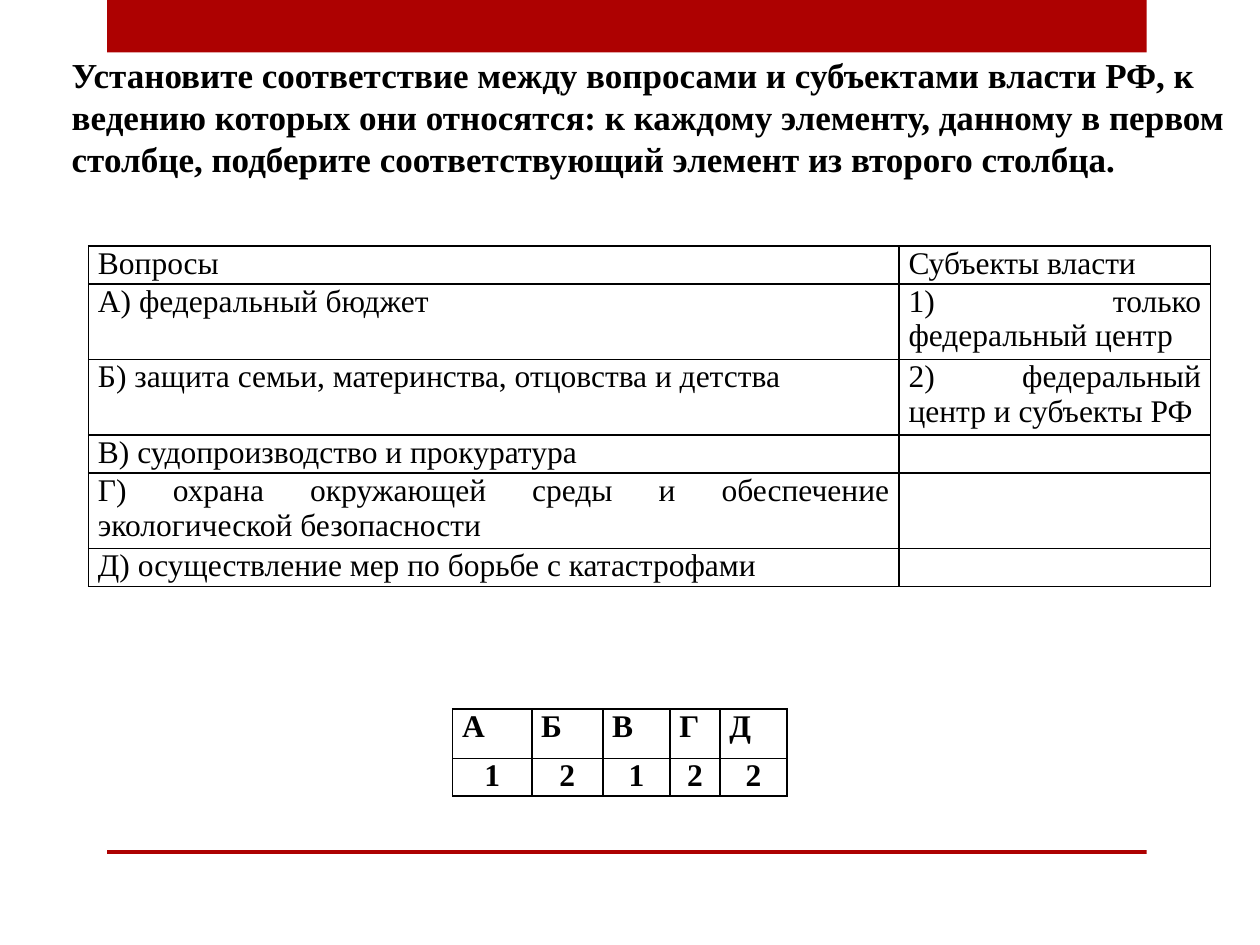
from lxml.etree import SubElement
from pptx import Presentation
from pptx.dml.color import RGBColor
from pptx.enum.shapes import MSO_SHAPE
from pptx.enum.text import MSO_ANCHOR, MSO_AUTO_SIZE, PP_ALIGN
from pptx.oxml.ns import qn
from pptx.util import Pt

RED = RGBColor(0xAD, 0x01, 0x01)
BLACK = RGBColor(0, 0, 0)
FONT = "Times New Roman"
TEXT_SIZE = 18
ROW_HEIGHT = 21.6

TITLE = (
    "Установите соответствие между вопросами и субъектами власти РФ, "
    "к ведению которых они относятся: к каждому элементу, данному в первом "
    "столбце, подберите соответствующий элемент из второго столбца."
)
QUESTIONS = [
    ("Вопросы", "Субъекты власти"),
    ("А) федеральный бюджет", "1) только федеральный центр"),
    ("Б) защита семьи, материнства, отцовства и детства",
     "2) федеральный центр и субъекты РФ"),
    ("В) судопроизводство и прокуратура", ""),
    ("Г) охрана окружающей среды и обеспечение экологической безопасности", ""),
    ("Д) осуществление мер по борьбе с катастрофами", ""),
]
QUESTION_LINES = [1, 2, 2, 1, 2, 1]
ANSWERS = ["АБВГД", "12122"]


class SlideBuilder:
    def __init__(self, page):
        self.page = page

    def add_text(self, para, text, size, bold, align):
        para.alignment = align
        span = para.add_run()
        span.text = text
        span.font.name = FONT
        span.font.size = Pt(size)
        span.font.bold = bold
        span.font.color.rgb = BLACK

    def title(self, text, left, top, width, height):
        box = self.page.shapes.title
        box.left, box.top, box.width, box.height = map(Pt, (left, top, width, height))
        frame = box.text_frame
        frame.word_wrap = True
        frame.auto_size = MSO_AUTO_SIZE.SHAPE_TO_FIT_TEXT
        frame.vertical_anchor = MSO_ANCHOR.MIDDLE
        para = frame.paragraphs[0]
        para.line_spacing = Pt(24)
        self.add_text(para, text, 20, True, PP_ALIGN.LEFT)

    def bar(self, left, top, width, height):
        bar = self.page.shapes.add_shape(
            MSO_SHAPE.RECTANGLE, *map(Pt, (left, top, width, height)))
        bar.shadow.inherit = False
        bar.fill.solid()
        bar.fill.fore_color.rgb = RED
        bar.line.fill.background()

    def border(self, cell):
        """Draw a thin black line on all four sides of the cell."""
        properties = cell._tc.get_or_add_tcPr()
        for position, side in enumerate(("a:lnL", "a:lnR", "a:lnT", "a:lnB")):
            line = properties.makeelement(qn(side), {"w": str(Pt(1))})
            fill = SubElement(line, qn("a:solidFill"))
            SubElement(fill, qn("a:srgbClr"), val=str(BLACK))
            properties.insert(position, line)

    def table(self, rows, left, top, widths, heights, aligns, bold=False):
        """Add a plain ruled table; aligns holds one alignment per row."""
        table = self.page.shapes.add_table(
            len(rows), len(widths), Pt(left), Pt(top),
            Pt(sum(widths)), Pt(sum(heights))).table
        table.first_row = table.horz_banding = False
        for column, width in zip(table.columns, widths):
            column.width = Pt(width)
        for r, (texts, height, align) in enumerate(zip(rows, heights, aligns)):
            table.rows[r].height = Pt(height)
            for c, text in enumerate(texts):
                cell = table.cell(r, c)
                cell.margin_left = cell.margin_right = Pt(5.4)
                cell.margin_top = cell.margin_bottom = 0
                cell.fill.background()
                self.border(cell)
                self.add_text(cell.text_frame.paragraphs[0], text,
                              TEXT_SIZE, bold, align)


def main():
    deck = Presentation()
    deck.slide_width, deck.slide_height = Pt(720), Pt(540)
    slide = SlideBuilder(deck.slides.add_slide(deck.slide_layouts[5]))

    slide.bar(61.2, 0, 594, 30)
    slide.bar(61.2, 485.8, 594, 2.2)
    slide.title(TITLE, 33.8, 26.8, 686.2, 79.9)
    slide.table(QUESTIONS, 50.6, 140.6, [463.2, 178],
                [lines * ROW_HEIGHT for lines in QUESTION_LINES],
                [PP_ALIGN.JUSTIFY] * len(QUESTIONS))
    slide.table(ANSWERS, 258.7, 405.2, [45.2, 40.6, 38.4, 28.6, 38.4],
                [28.1, ROW_HEIGHT], [PP_ALIGN.JUSTIFY, PP_ALIGN.CENTER], bold=True)
    deck.save("out.pptx")


if __name__ == "__main__":
    main()
